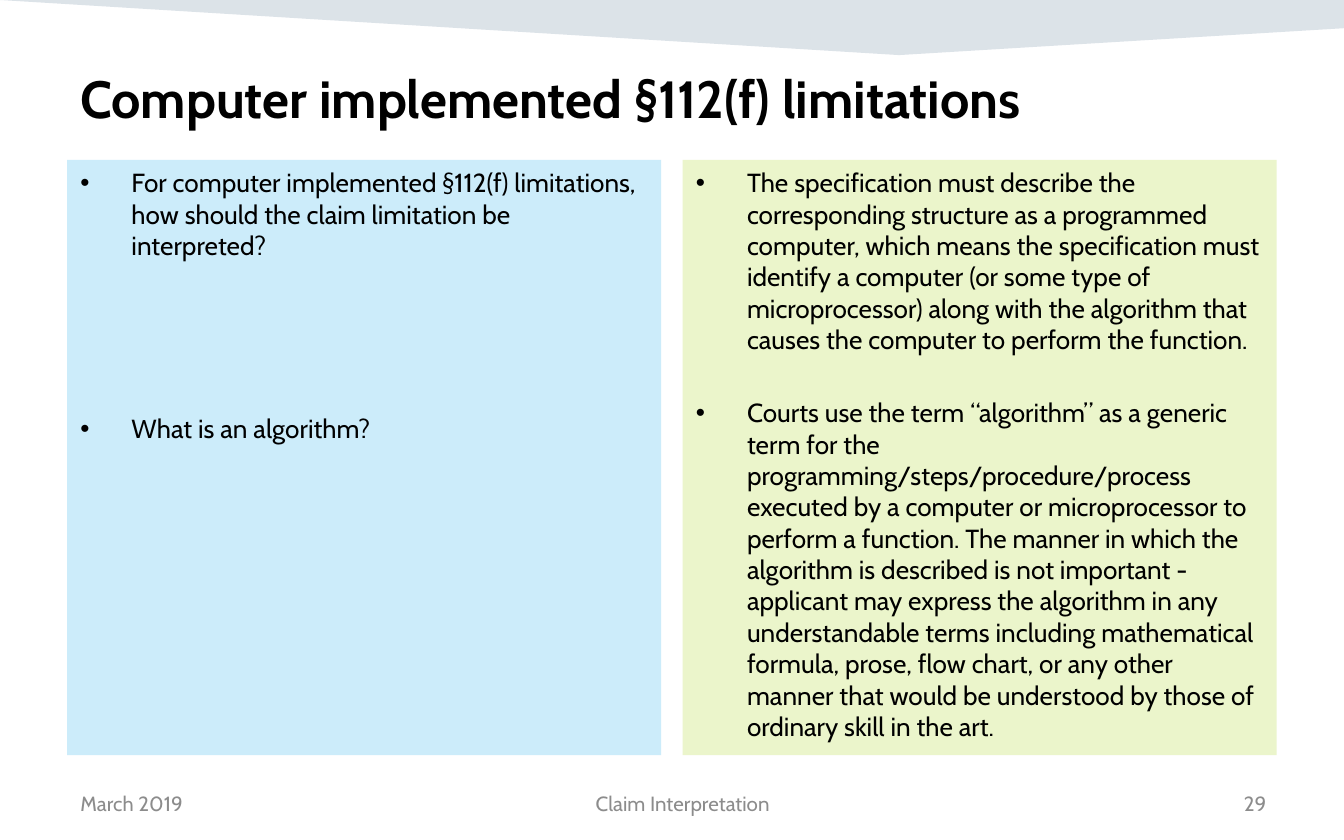
from dataclasses import dataclass

from lxml.etree import SubElement
from pptx import Presentation
from pptx.dml.color import RGBColor
from pptx.enum.shapes import MSO_SHAPE
from pptx.enum.text import MSO_ANCHOR, PP_ALIGN
from pptx.oxml.ns import qn
from pptx.util import Inches, Pt


@dataclass(frozen=True)
class Theme:
    font: str = "Cabin"
    ink: str = "000000"
    muted: str = "8C8C8C"
    band: str = "164469"
    question: str = "CCECFA"
    answer: str = "EBF5CB"
    title_size: int = 28
    body_size: int = 14
    footer_size: int = 11


THEME = Theme()

# Content: each column is a fill and a list of (blank lines before, text)
TITLE = "Computer implemented §112(f) limitations"
COLUMNS = [
    (THEME.question, [
        (0, "For computer implemented §112(f) limitations, how should the claim "
            "limitation be interpreted?"),
        (4, "What is an algorithm?"),
    ]),
    (THEME.answer, [
        (0, "The specification must describe the corresponding structure as a "
            "programmed computer, which means the specification must identify a "
            "computer (or some type of microprocessor) along with the algorithm "
            "that causes the computer to perform the function."),
        (1, "Courts use the term “algorithm” as a generic term for the "
            "programming/steps/procedure/process executed by a computer or "
            "microprocessor to perform a function. The manner in which the "
            "algorithm is described is not important - applicant may express the "
            "algorithm in any understandable terms including mathematical formula, "
            "prose, flow chart, or any other manner that would be understood by "
            "those of ordinary skill in the art."),
    ]),
]
FOOTERS = [  # text, left, width, alignment
    ("March 2019", 0.5, 1.51, PP_ALIGN.LEFT),
    ("Claim Interpretation", 2.07, 6.02, PP_ALIGN.CENTER),
    ("29", 8.17, 1.35, PP_ALIGN.RIGHT),
]

# Layout in inches
WIDTH, HEIGHT = 10, 6.25
MARGIN, GAP = 0.5, 0.16
COLUMN_WIDTH = (WIDTH - 2 * MARGIN - GAP) / len(COLUMNS)
COLUMN_TOP, COLUMN_HEIGHT = 1.19, 4.43
FOOTER_TOP, FOOTER_HEIGHT = 5.79, 0.33
INDENT = 0.38
BAND = [(0, 0), (WIDTH, 0), (WIDTH, 0.21), (6.69, 0.41)]
BAND_OPACITY = 15

# Spacing in points
LINE = 1.2 * THEME.body_size
SPACE = 0.2 * THEME.body_size


def write(para, text, *, size, color=THEME.ink, bold=False,
          align=PP_ALIGN.LEFT, before=0, bullet=False):
    para.alignment = align
    para.space_before = Pt(before)
    span = para.add_run()
    span.text = text
    span.font.name = THEME.font
    span.font.size = Pt(size)
    span.font.bold = bold
    span.font.color.rgb = RGBColor.from_string(color)
    if bullet:
        properties = para._p.get_or_add_pPr()
        properties.set("marL", str(Inches(INDENT)))
        properties.set("indent", str(-Inches(INDENT)))
        SubElement(properties, qn("a:buFont")).set("typeface", "Arial")
        SubElement(properties, qn("a:buChar")).set("char", "•")


def paint(shape, color):
    shape.shadow.inherit = False
    shape.fill.solid()
    shape.fill.fore_color.rgb = RGBColor.from_string(color)
    shape.line.fill.background()


def add_label(page, text, left, top, width, height, **style):
    box = page.shapes.add_textbox(*map(Inches, (left, top, width, height)))
    box.text_frame.word_wrap = True
    box.text_frame.vertical_anchor = MSO_ANCHOR.BOTTOM
    write(box.text_frame.paragraphs[0], text, **style)


def add_column(page, index, fill, points):
    left = MARGIN + index * (COLUMN_WIDTH + GAP)
    box = page.shapes.add_shape(
        MSO_SHAPE.RECTANGLE,
        *map(Inches, (left, COLUMN_TOP, COLUMN_WIDTH, COLUMN_HEIGHT)))
    paint(box, fill)
    frame = box.text_frame
    frame.word_wrap = True
    frame.vertical_anchor = MSO_ANCHOR.TOP
    for number, (blanks, text) in enumerate(points):
        para = frame.add_paragraph() if number else frame.paragraphs[0]
        write(para, text, size=THEME.body_size, bullet=True,
              before=blanks * (LINE + SPACE) + SPACE)


def add_band(page):
    start, *corners = [(Inches(x), Inches(y)) for x, y in BAND]
    builder = page.shapes.build_freeform(*start)
    builder.add_line_segments(corners, close=True)
    band = builder.convert_to_shape()
    paint(band, THEME.band)
    color = band._element.spPr.find(f"{qn('a:solidFill')}/{qn('a:srgbClr')}")
    SubElement(color, qn("a:alpha")).set("val", str(BAND_OPACITY * 1000))


def main():
    deck = Presentation()
    deck.slide_width, deck.slide_height = Inches(WIDTH), Inches(HEIGHT)
    page = deck.slides.add_slide(deck.slide_layouts[6])

    # Top band and title
    add_band(page)
    add_label(page, TITLE, MARGIN, 0.41, WIDTH - 2 * MARGIN, 0.6,
              size=THEME.title_size, bold=True)

    # Questions and answers
    for index, (fill, points) in enumerate(COLUMNS):
        add_column(page, index, fill, points)

    # Footer
    for text, left, width, align in FOOTERS:
        add_label(page, text, left, FOOTER_TOP, width, FOOTER_HEIGHT,
                  size=THEME.footer_size, color=THEME.muted, align=align)

    deck.save("out.pptx")


if __name__ == "__main__":
    main()
